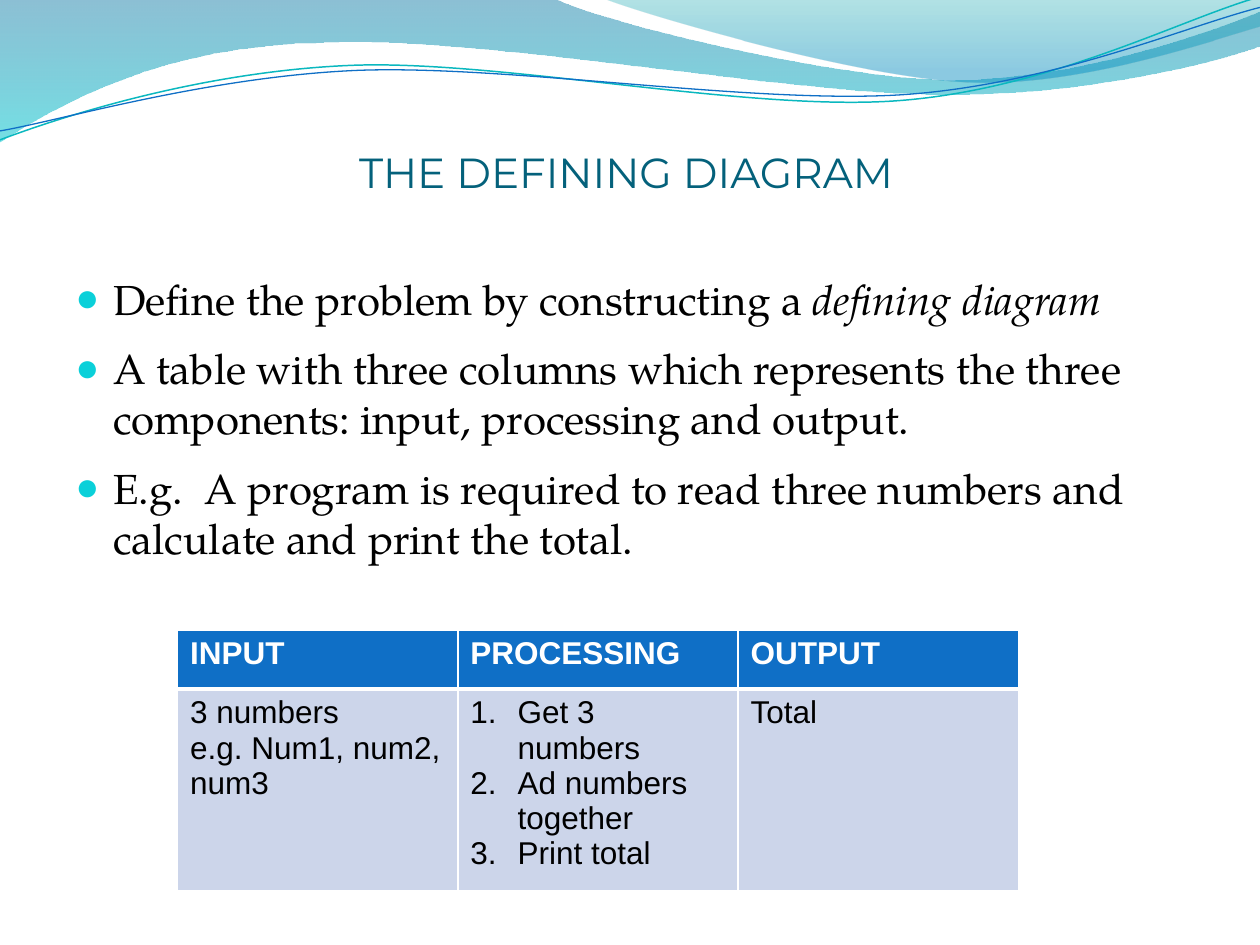
"""Build the slide on the defining diagram."""
import math

from lxml import etree
from pptx import Presentation, util as u
from pptx.dml.color import RGBColor
from pptx.enum import text
from pptx.oxml import ns

SIZE = 25.4, 19.05
TILT = 2.7
WAVES = [
    dict(start=(-0.03, -0.03), steps=[
        (11.18, -0.03),
        (12.09, 0.43, 16.87, 1.6, 19.25, 1.6),
        (21.67, 1.6, 24.33, 0.66, 25.4, 0.23),
        (25.43, 0.91),
        (24.97, 1.12, 22.1, 1.93, 18.95, 1.9),
        (15.8, 1.9, 9.7, 0.71, 6.53, 0.86),
        (3.28, 0.89, 1.17, 2.11, -0.03, 2.87)],
        stops=[(0, "0074A1", 45), (1, "00C6CF", 55)]),
    dict(start=(12.17, -0.03), steps=[
        (12.93, 0.28, 17.32, 1.57, 19.53, 1.65),
        (21.74, 1.75, 24.41, 0.81, 25.4, 0.53),
        (25.4, -0.03)],
        stops=[(0, "00A1A9", 30), (0.8, "008BBF", 45)]),
    dict(start=(0, 2.82), steps=[
        (1.22, 2.36, 4.01, 1.45, 7.04, 1.32),
        (10.03, 1.19, 15.06, 2.26, 18.11, 2.03),
        (21.16, 1.8, 23.83, 0.38, 25.35, -0.05)],
        line=("0AB8BF", 0.85), mid=(12.68, 1.46)),
    dict(start=(0, 2.64), steps=[
        (1.19, 2.44, 4.17, 1.55, 7.19, 1.42),
        (10.24, 1.3, 15.16, 2.11, 18.21, 1.91),
        (21.23, 1.7, 23.9, 0.53, 25.4, 0.15)],
        line=("0F6FC6", 0.75), mid=(12.69, 1.5)),
]
TITLE = "THE DEFINING DIAGRAM"
POINTS = [
    [("Define the problem by constructing a ", False), ("defining diagram", True)],
    [("A table with three columns which represents the three components: "
      "input, processing and output.", False)],
    [("E.g.  A program is required to read three numbers and calculate "
      "and print the total.", False)],
]
HEADS = ["INPUT", "PROCESSING", "OUTPUT"]
CELLS = [["3 numbers", "e.g. Num1, num2, num3"],
         ["Get 3 numbers", "Ad numbers together", "Print total"],
         ["Total"]]
LISTED = "PROCESSING"
COL, ROWS, TALL = 5.65, (1.19, 2.08), 4.5

HEAD = dict(name="Montserrat", size=u.Pt(24))
BODY = dict(name="TeX Gyre Pagella", size=u.Pt(24))
CELL = dict(name="Arial", size=u.Pt(18))


def paint(code):
    return RGBColor.from_string(code)


def put(item, form):
    for key, val in form.items():
        setattr(item, key, val)


def add(node, tag, **attrs):
    return etree.SubElement(node, ns.qn(tag), attrs)


def write(para, words, form, color, **more):
    run = para.add_run()
    run.text = words
    put(run.font, {**form, **more})
    run.font.color.rgb = paint(color)


def indent(para, wide):
    props = para._p.get_or_add_pPr()
    props.set("marL", str(u.Cm(wide)))
    props.set("indent", str(-u.Cm(wide)))
    return props


def turn(spot, mid):
    angle = math.radians(TILT)
    x, y = spot[0] - mid[0], spot[1] - mid[1]
    return (mid[0] + x * math.cos(angle) - y * math.sin(angle),
            mid[1] + x * math.sin(angle) + y * math.cos(angle))


def bend(wave, steps):
    nodes = iter(list(wave._element.iter(ns.qn("a:lnTo"))))
    for step in steps:
        group = [next(nodes) for _ in range(len(step) // 2)]
        if len(group) == 3:
            curve = etree.Element(ns.qn("a:cubicBezTo"))
            group[0].addprevious(curve)
            for node in group:
                curve.append(node[0])
                node.getparent().remove(node)


def draw(slide, start, steps, stops=None, line=None, mid=None):
    spots = [start] + [s[i:i + 2] for s in steps for i in range(0, len(s), 2)]
    if mid:
        spots = [turn(spot, mid) for spot in spots]
    first, *rest = [(u.Cm(x), u.Cm(y)) for x, y in spots]
    pen = slide.shapes.build_freeform(*first)
    pen.add_line_segments(rest, close=bool(stops))
    wave = pen.convert_to_shape()
    bend(wave, steps)
    wave.shadow.inherit = False
    if line:
        wave.rotation = 360 - TILT
        wave.fill.background()
        wave.line.color.rgb = paint(line[0])
        wave.line.width = u.Pt(line[1])
        return
    wave.line.fill.background()
    wave.fill.gradient()
    wave.fill.gradient_angle = 270
    for stop, (place, color, _) in zip(wave.fill.gradient_stops, stops):
        stop.position = place
        stop.color.rgb = paint(color)
    for node, (_, _, solid) in zip(wave._element.iter(ns.qn("a:srgbClr")), stops):
        add(node, "a:alpha", val=str(solid * 1000))


def box(slide, place, form):
    frame = slide.shapes.add_textbox(*map(u.Cm, place)).text_frame
    put(frame, dict(word_wrap=True, **form))
    return frame


def lines(frame, count):
    return [frame.paragraphs[0]] + [frame.add_paragraph() for _ in range(count - 1)]


def points(frame):
    for para, runs in zip(lines(frame, len(POINTS)), POINTS):
        props = indent(para, 0.76)
        add(add(props, "a:spcBef"), "a:spcPct", val="20000")
        para.space_after = u.Pt(6)
        add(add(props, "a:buClr"), "a:srgbClr", val="0BD0D9")
        add(props, "a:buSzPct", val="95000")
        add(props, "a:buFont", typeface="Arial")
        add(props, "a:buChar", char="●")
        for words, slant in runs:
            write(para, words, BODY, "000000", italic=slant)


def fill(cell, words, head, listed):
    edges = dict(L=1, R=1, T=1, B=3 if head else 1)
    props = cell._tc.get_or_add_tcPr()
    for side, width in edges.items():
        edge = add(props, "a:ln" + side, w=str(u.Pt(width)))
        add(add(edge, "a:solidFill"), "a:srgbClr", val="FFFFFF")
    cell.fill.solid()
    cell.fill.fore_color.rgb = paint("0F6FC6" if head else "CCD5EA")
    for para, line in zip(lines(cell.text_frame, len(words)), words):
        if listed:
            add(indent(para, 0.95), "a:buAutoNum", type="arabicPeriod")
        write(para, line, CELL, "FFFFFF" if head else "000000", bold=head)


def grid(slide):
    place = 3.58, 12.7, COL * len(HEADS), TALL
    table = slide.shapes.add_table(2, len(HEADS), *map(u.Cm, place)).table
    for row, tall in zip(table.rows, ROWS):
        row.height = u.Cm(tall)
    for i, (name, words) in enumerate(zip(HEADS, CELLS)):
        table.columns[i].width = u.Cm(COL)
        fill(table.cell(0, i), [name], True, False)
        fill(table.cell(1, i), words, False, name == LISTED)


def main():
    deck = Presentation()
    put(deck, dict(zip(("slide_width", "slide_height"), map(u.Cm, SIZE))))
    slide = deck.slides.add_slide(deck.slide_layouts[6])
    for wave in WAVES:
        draw(slide, **wave)
    frame = box(slide, (1.19, 0.79, 22.86, 3.18), dict(
        vertical_anchor=text.MSO_ANCHOR.BOTTOM,
        margin_left=0, margin_right=0, margin_bottom=0))
    frame.paragraphs[0].alignment = text.PP_ALIGN.CENTER
    write(frame.paragraphs[0], TITLE, HEAD, "04617B")
    points(box(slide, (1.27, 5.38, 22.86, 12.19), {}))
    grid(slide)
    deck.save("out.pptx")


if __name__ == "__main__":
    main()
